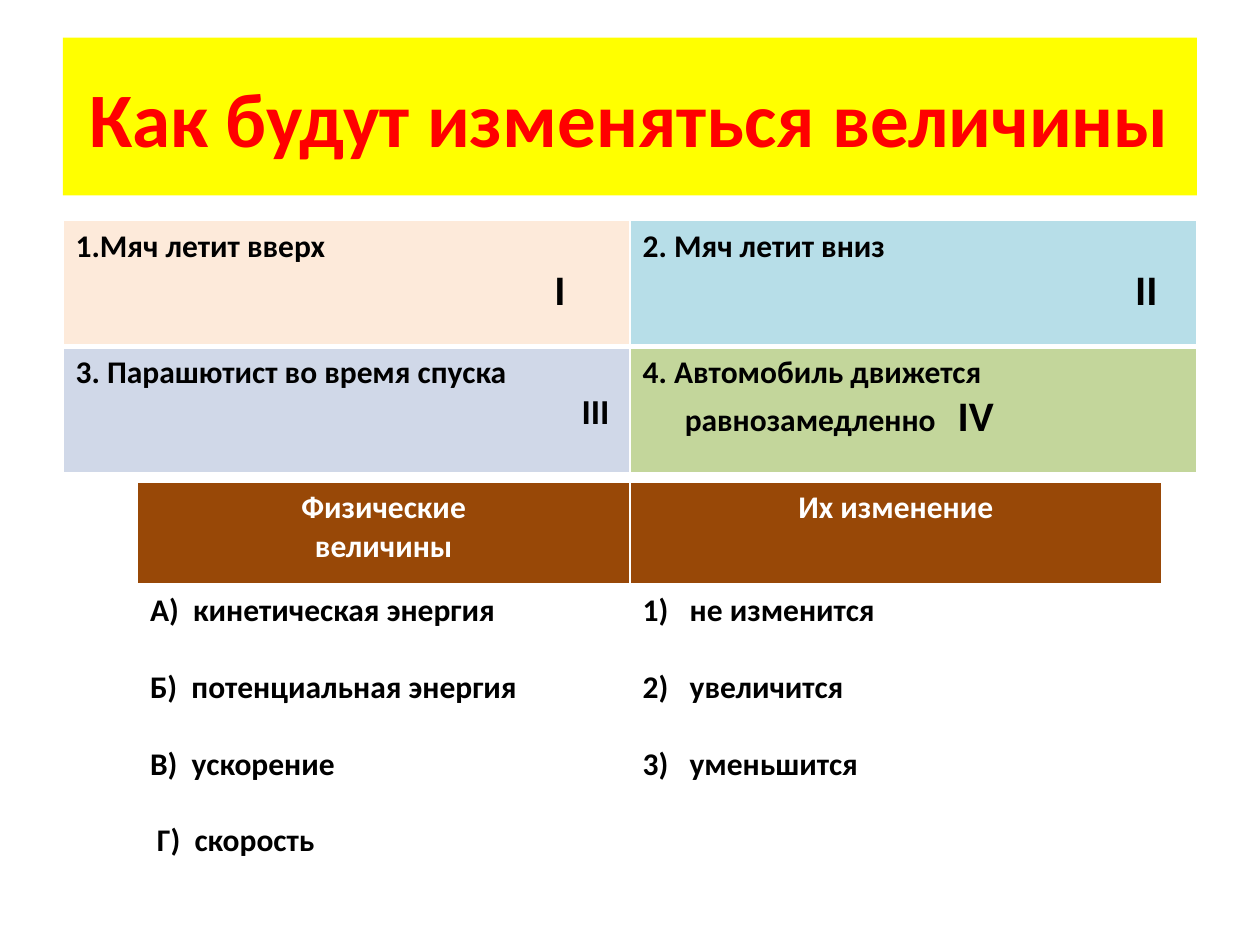
from lxml.etree import SubElement
from pptx import Presentation
from pptx.dml.color import RGBColor
from pptx.enum.shapes import MSO_SHAPE
from pptx.enum.text import MSO_ANCHOR, PP_ALIGN
from pptx.oxml.ns import qn
from pptx.util import Cm, Pt

BLACK = RGBColor(0x00, 0x00, 0x00)
WHITE = RGBColor(0xFF, 0xFF, 0xFF)
RED = RGBColor(0xFF, 0x00, 0x00)
YELLOW = RGBColor(0xFF, 0xFF, 0x00)
PEACH = RGBColor(0xFD, 0xEA, 0xDA)
AQUA = RGBColor(0xB7, 0xDE, 0xE8)
LILAC = RGBColor(0xD0, 0xD8, 0xE8)
GREEN = RGBColor(0xC3, 0xD6, 0x9B)
BROWN = RGBColor(0x98, 0x48, 0x07)


class Deck:
    """Hold the text style and the current slide, and draw its elements."""

    def __init__(self, font="Calibri", size=18):
        self.font, self.size = font, size
        self.prs = Presentation()
        self.prs.slide_width, self.prs.slide_height = Cm(25.4), Cm(19.05)
        self.slide = self.prs.slides.add_slide(self.prs.slide_layouts[6])

    def text(self, frame, paras, color=BLACK, align=PP_ALIGN.LEFT):
        for i, (runs, opts) in enumerate(paras):
            para = frame.paragraphs[0] if i == 0 else frame.add_paragraph()
            para.alignment = align
            self.layout(para, **opts)
            for words, size in runs:
                run = para.add_run()
                run.text = words
                run.font.name, run.font.size = self.font, Pt(size)
                run.font.bold = True
                run.font.color.rgb = color

    def layout(self, para, left=0, first=0, gap=0, tab=None, count=False):
        para.space_before = Pt(gap)
        props = para._p.get_or_add_pPr()
        props.set("marL", str(Cm(left)))
        props.set("indent", str(Cm(first)))
        if count:
            SubElement(props, qn("a:buAutoNum"), type="arabicParenR")
        if tab:
            stops = SubElement(props, qn("a:tabLst"))
            SubElement(stops, qn("a:tab"), pos=str(Cm(tab)), algn="l")

    def line(self, *words, **opts):
        return [(word, self.size) for word in words], opts

    def title(self, words, x, y, w, h):
        box = self.slide.shapes.add_shape(
            MSO_SHAPE.RECTANGLE, Cm(x), Cm(y), Cm(w), Cm(h))
        box.shadow.inherit = False
        box.fill.solid()
        box.fill.fore_color.rgb = YELLOW
        box.line.fill.background()
        box.text_frame.word_wrap = True
        box.text_frame.vertical_anchor = MSO_ANCHOR.MIDDLE
        self.text(box.text_frame, [([(words, 44)], {})], RED, PP_ALIGN.CENTER)

    def table(self, x, y, cols, rows, cells):
        grid = self.slide.shapes.add_table(
            len(rows), len(cols), Cm(x), Cm(y), Cm(sum(cols)), Cm(sum(rows))).table
        grid.first_row = grid.horz_banding = False
        for col, width in zip(grid.columns, cols):
            col.width = Cm(width)
        for row, height in zip(grid.rows, rows):
            row.height = Cm(height)
        for r, items in enumerate(cells):
            for c, (fill, paras) in enumerate(items):
                cell = grid.cell(r, c)
                cell.fill.solid()
                cell.fill.fore_color.rgb = fill
                self.edges(cell, top=3 if r else 1, base=1 if r else 3)
                head = fill == BROWN
                self.text(cell.text_frame, paras, WHITE if head else BLACK,
                          PP_ALIGN.CENTER if head else PP_ALIGN.LEFT)

    def edges(self, cell, top, base):
        props = cell._tc.get_or_add_tcPr()
        for i, (side, width) in enumerate(zip("LRTB", (1, 1, top, base))):
            edge = SubElement(props, qn("a:ln" + side), w=str(Pt(width)))
            paint = SubElement(edge, qn("a:solidFill"))
            SubElement(paint, qn("a:srgbClr"), val=str(WHITE))
            props.insert(i, edge)

    def save(self):
        self.prs.save("out.pptx")


def main():
    deck = Deck()
    line = deck.line
    deck.title("Как будут изменяться величины", 1.27, 0.76, 22.86, 3.18)
    deck.table(1.27, 4.45, [11.43] * 2, [2.54] * 2, [
        [(PEACH, [line("1.Мяч летит вверх"), ([("I", 24)], {"left": 9.65})]),
         (AQUA, [line("2. Мяч летит вниз"), ([("II", 24)], {"left": 9.93})])],
        [(LILAC, [line("3. Парашютист во время спуска"),
                  ([("III", 20)], {"left": 10.2})]),
         (GREEN, [line("4. Автомобиль движется"),
                  ([("равнозамедленно\t", 18), ("IV", 24)],
                   {"first": 0.85, "tab": 9.4})])],
    ])
    names = ["А)  кинетическая энергия", "Б)  потенциальная энергия",
             "В)  ускорение", "Г)  скорость"]
    kinds = ["не изменится", "увеличится", "уменьшится"]
    deck.table(2.77, 9.73, [9.93, 10.72], [2.06, 5.66], [
        [(BROWN, [line("Физические"), line("величины")]),
         (BROWN, [line("Их изменение")])],
        [(WHITE, [line(name, gap=22 if i else 0, first=0.14 if i == 3 else 0)
                  for i, name in enumerate(names)]),
         (WHITE, [line(kind, gap=22 if i else 0, left=0.95, first=-0.95, count=True)
                  for i, kind in enumerate(kinds)])],
    ])
    deck.save()


if __name__ == "__main__":
    main()
